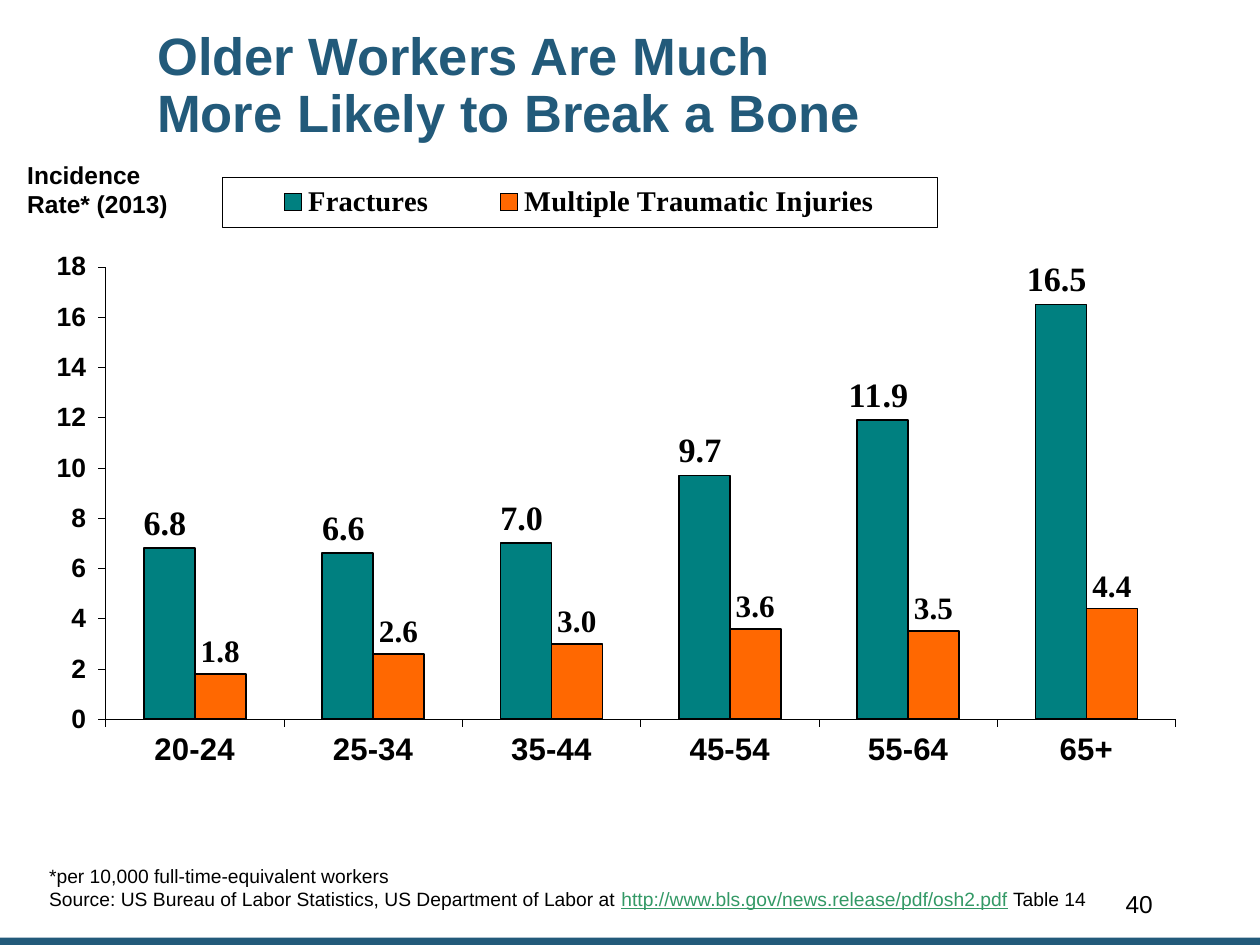
import pptx
import pptx.chart.data
import pptx.dml.color
import pptx.enum.chart
import pptx.enum.shapes
import pptx.enum.text
import pptx.oxml
import pptx.oxml.ns
import pptx.util
from lxml import etree

Cm = pptx.util.Cm
Pt = pptx.util.Pt
qn = pptx.oxml.ns.qn

THEME = {
    "sans": "Arial", "serif": "Times New Roman",
    "blue": "225A7A", "black": "000000", "link": "339966",
    "series": ["008080", "FF6801"],
    "title": 30, "side_label": 14, "number": 14, "footnote": 11,
    "categories": 17.8, "values": 15.1, "legend": 16.3, "data_labels": [19.5, 17.8],
}


def style(font, size, color=THEME["black"], bold=False, name=THEME["sans"]):
    font.name = name
    font.size = Pt(size)
    font.bold = bold
    font.color.rgb = pptx.dml.color.RGBColor.from_string(color)


def set_layout(parent, index, inner, **fractions):
    """Place a chart part by fractions of the chart area."""
    for old in parent.findall(qn("c:layout")):
        parent.remove(old)
    layout = etree.Element(qn("c:layout"))
    manual = etree.SubElement(layout, qn("c:manualLayout"))
    if inner:
        etree.SubElement(manual, qn("c:layoutTarget"), val="inner")
    for mode in ("xMode", "yMode"):
        etree.SubElement(manual, qn("c:" + mode), val="edge")
    for key, value in fractions.items():
        etree.SubElement(manual, qn("c:" + key), val=str(value))
    parent.insert(index, layout)


presentation = pptx.Presentation()
presentation.slide_width = Cm(25.4)
presentation.slide_height = Cm(19.05)
slide = presentation.slides.add_slide(presentation.slide_layouts[5])
black = pptx.dml.color.RGBColor.from_string(THEME["black"])

# Bottom band
band = slide.shapes.add_shape(
    pptx.enum.shapes.MSO_SHAPE.RECTANGLE, Cm(0), Cm(18.9), Cm(25.4), Cm(0.15))
band.shadow.inherit = False
band.fill.solid()
band.fill.fore_color.rgb = pptx.dml.color.RGBColor.from_string(THEME["blue"])
band.line.fill.background()

# Title
title = slide.shapes.title
title.left, title.top, title.width, title.height = Cm(0), Cm(0.48), Cm(20.52), Cm(1.73)
title.text_frame.margin_left = Cm(3.17)
title.text_frame.vertical_anchor = pptx.enum.text.MSO_ANCHOR.TOP
title.text_frame.auto_size = pptx.enum.text.MSO_AUTO_SIZE.NONE
title.text_frame.text = "Older Workers Are Much\vMore Likely to Break a Bone"
title_paragraph = title.text_frame.paragraphs[0]
title_paragraph.alignment = pptx.enum.text.PP_ALIGN.LEFT
title_paragraph.line_spacing = 0.9
for run in title_paragraph.runs:
    style(run.font, THEME["title"], THEME["blue"], bold=True)

# Chart
chart_data = pptx.chart.data.CategoryChartData()
chart_data.categories = ["20-24", "25-34", "35-44", "45-54", "55-64", "65+"]
chart_data.add_series("Fractures", [6.8, 6.6, 7, 9.7, 11.9, 16.5])
chart_data.add_series("Multiple Traumatic Injuries", [1.8, 2.6, 3, 3.6, 3.5, 4.4])
chart = slide.shapes.add_chart(
    pptx.enum.chart.XL_CHART_TYPE.COLUMN_CLUSTERED,
    Cm(0.81), Cm(3.56), Cm(24.43), Cm(12.78), chart_data).chart
chart.has_title = False
style(chart.font, THEME["categories"], bold=True, name=THEME["serif"])

plot = chart.plots[0]
plot.gap_width = 150
plot.overlap = 0
plot.vary_by_categories = False
label_formats = ["#,##0.0_);[Red]\\(#,##0.0\\)", "0.0"]
for series, color, size, number_format in zip(
        plot.series, THEME["series"], THEME["data_labels"], label_formats):
    series.format.fill.solid()
    series.format.fill.fore_color.rgb = pptx.dml.color.RGBColor.from_string(color)
    series.format.line.color.rgb = black
    series.format.line.width = Pt(1)
    labels = series.data_labels
    labels.show_value = True
    labels.position = pptx.enum.chart.XL_LABEL_POSITION.OUTSIDE_END
    labels.number_format = number_format
    labels.number_format_is_linked = False
    style(labels.font, size, bold=True, name=THEME["serif"])

for axis, size in ((chart.category_axis, THEME["categories"]),
                   (chart.value_axis, THEME["values"])):
    axis.has_major_gridlines = False
    axis.major_tick_mark = pptx.enum.chart.XL_TICK_MARK.OUTSIDE
    axis.minor_tick_mark = pptx.enum.chart.XL_TICK_MARK.NONE
    axis.format.line.color.rgb = black
    axis.format.line.width = Pt(0.25)
    style(axis.tick_labels.font, size, bold=True)
chart.value_axis.minimum_scale = 0
chart.value_axis.maximum_scale = 18
chart.value_axis.major_unit = 2
chart.value_axis.tick_labels.number_format = "#,##0_);[Red]\\(#,##0\\)"
chart.value_axis.tick_labels.number_format_is_linked = False

chart.has_legend = True
legend = chart.legend
legend.position = pptx.enum.chart.XL_LEGEND_POSITION.TOP
legend.include_in_layout = False
style(legend.font, THEME["legend"], bold=True, name=THEME["serif"])
legend_xml = chart._chartSpace.find(".//" + qn("c:legend"))
frame = pptx.oxml.parse_xml(
    f'<c:spPr {pptx.oxml.ns.nsdecls("c", "a")}><a:ln w="3175"><a:solidFill>'
    f'<a:srgbClr val="{THEME["black"]}"/></a:solidFill></a:ln></c:spPr>')
legend_xml.find(qn("c:txPr")).addprevious(frame)
set_layout(legend_xml, 1, False, x=0.15, y=0.0, w=0.59, h=0.08)
plot_area = chart._chartSpace.find(".//" + qn("c:plotArea"))
set_layout(plot_area, 0, True, x=0.054, y=0.142, w=0.883, h=0.714)

# Side label, footnote and page number
side_label = slide.shapes.add_textbox(Cm(0.3), Cm(3.1), Cm(3.66), Cm(1.45))
side_label.text_frame.word_wrap = True
side_label.text_frame.text = "Incidence Rate* (2013)"
style(side_label.text_frame.paragraphs[0].runs[0].font, THEME["side_label"], bold=True)

footnote = slide.shapes.add_textbox(Cm(0.74), Cm(17.3), Cm(21.74), Cm(1.19))
footnote.text_frame.word_wrap = True
footnote.text_frame.text = (
    "*per 10,000 full-time-equivalent workers\v"
    "Source: US Bureau of Labor Statistics, US Department of Labor at ")
footnote_paragraph = footnote.text_frame.paragraphs[0]
address = footnote_paragraph.add_run()
address.text = "http://www.bls.gov/news.release/pdf/osh2.pdf"
footnote_paragraph.add_run().text = " Table 14"
for run in footnote_paragraph.runs:
    style(run.font, THEME["footnote"])
style(address.font, THEME["footnote"], THEME["link"])
address.font.underline = True

# A line break takes its height from its own run properties
for paragraph, size in ((title_paragraph, THEME["title"]),
                        (footnote_paragraph, THEME["footnote"])):
    for line_break in paragraph._p.findall(qn("a:br")):
        etree.SubElement(line_break, qn("a:rPr"), sz=str(size * 100))

page_number = slide.shapes.add_textbox(Cm(18.21), Cm(17.58), Cm(5.28), Cm(1.27))
page_number.text_frame.word_wrap = True
page_number.text_frame.vertical_anchor = pptx.enum.text.MSO_ANCHOR.MIDDLE
page_number.text_frame.text = "40"
page_number.text_frame.paragraphs[0].alignment = pptx.enum.text.PP_ALIGN.RIGHT
style(page_number.text_frame.paragraphs[0].runs[0].font, THEME["number"])

presentation.save("out.pptx")
